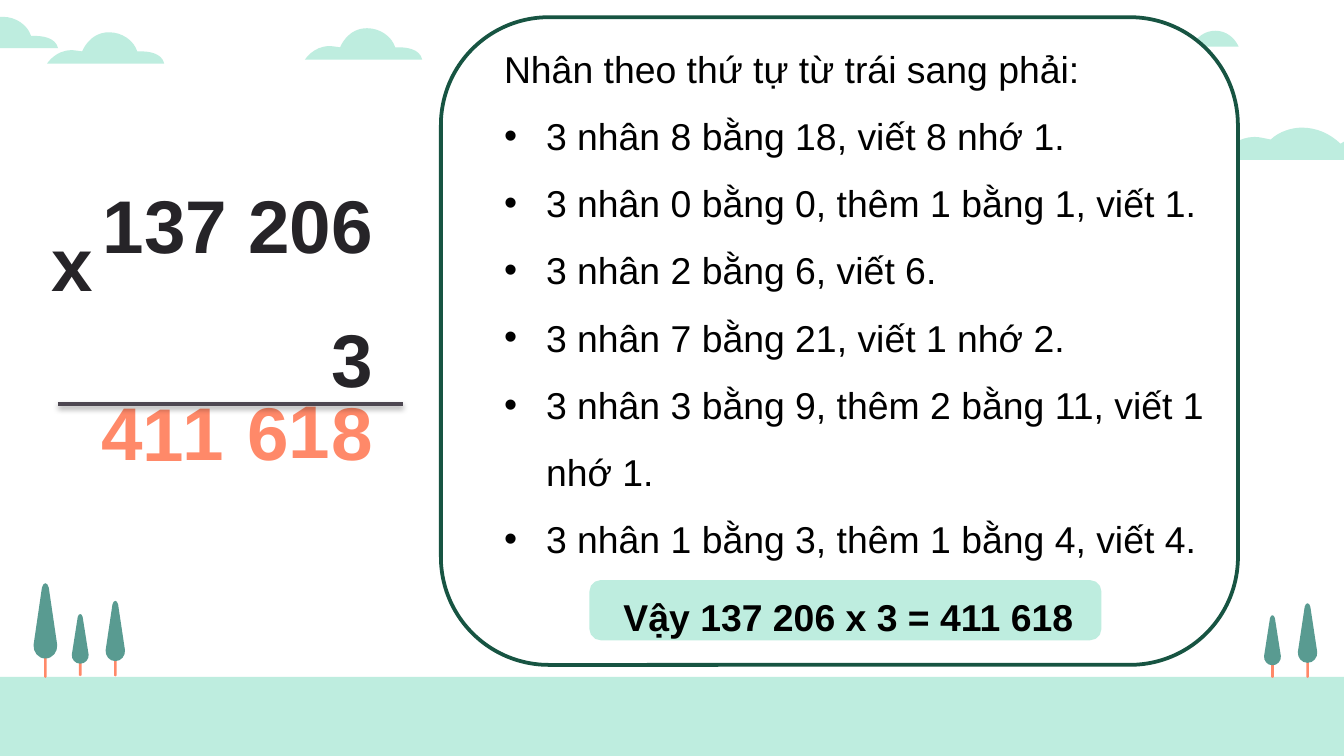
from lxml import etree
from pptx import Presentation, util as u
from pptx.dml.color import RGBColor
from pptx.enum import shapes as kinds, text as t
from pptx.oxml import parse_xml
from pptx.oxml.ns import nsdecls, qn

Pt = u.Pt
COLORS = {"mint": "BEEDDF", "leaf": "599B91", "coral": "FF8969", "forest": "175442",
          "ink": "262428", "rule": "4D4751", "black": "000000", "white": "FFFFFF"}
RGB = {name: RGBColor.from_string(value) for name, value in COLORS.items()}

CLOUD = [(.53, 0), (.36, 0, .3, .61, .3, .61), (.26, .59, .23, .57, .21, .57),
         (.07, .57, 0, 1, 0, 1), (1, 1), (.98, .65, .86, .61, .8, .61),
         (.78, .61, .77, .61, .77, .61), (.74, .26, .64, 0, .53, 0)]
WIDE_CLOUD = [(.5, 0), (.44, 0, .36, .12, .31, .37), (.27, .33, .24, .29, .21, .29),
              (.12, .29, .03, .58, 0, 1), (1, 1), (.98, .62, .9, .37, .82, .37),
              (.79, .37, .76, .42, .74, .5), (.67, .17, .59, 0, .5, 0)]
DOME = [(.5, 0), (.27, 0, .09, .42, 0, 1), (1, 1), (.91, .42, .73, 0, .5, 0)]
CROWN = [(.5, 0), (.45, 0, .38, .02, .36, .06), (.02, .82), (0, .91, .2, 1, .5, 1),
         (.8, 1, 1, .91, .98, .82), (.64, .06), (.62, .02, .55, 0, .5, 0)]
TRUNK = [(.5, 0), (.2, 0, 0, .02, 0, .05), (0, .95), (0, .98, .2, 1, .5, 1),
         (.8, 1, 1, .98, 1, .95), (1, .05), (1, .02, .8, 0, .5, 0)]

prs = Presentation()
prs.slide_width, prs.slide_height = Pt(720), Pt(405)
slide = prs.slides.add_slide(prs.slide_layouts[1])
slide.shapes.title.element.getparent().remove(slide.shapes.title.element)


def draw(steps, left, top, width, height, color):
    anchors = [(Pt(left + step[-2] * width), Pt(top + step[-1] * height)) for step in steps]
    builder = slide.shapes.build_freeform(*anchors[0])
    builder.add_line_segments(anchors[1:], close=True)
    outline = builder.convert_to_shape()
    outline.shadow.inherit = False
    outline.fill.solid()
    outline.fill.fore_color.rgb = RGB[color]
    outline.line.fill.background()
    segments = list(outline.element.iter(qn("a:lnTo")))
    for segment, step in zip(segments, steps[1:]):
        if len(step) == 6:
            curve = etree.Element(qn("a:cubicBezTo"))
            for x, y in zip(step[::2], step[1::2]):
                etree.SubElement(curve, qn("a:pt"),
                                 x=str(Pt(left + x * width) - outline.left),
                                 y=str(Pt(top + y * height) - outline.top))
            segment.getparent().replace(segment, curve)


def write(frame, lines, size, color, bold=False, align=t.PP_ALIGN.LEFT, spacing=1.0):
    frame.word_wrap = True
    for i, line in enumerate(lines):
        para = frame.paragraphs[0] if i == 0 else frame.add_paragraph()
        para.alignment, para.line_spacing = align, spacing
        para.space_before = Pt(0)
        run = para.add_run()
        run.text = line
        run.font.name, run.font.size, run.font.bold = "Arial", Pt(size), bold
        run.font.color.rgb = RGB[color]


draw(WIDE_CLOUD, 653.8, 68.4, 87, 17.3, "mint")
draw(DOME, 638.6, 16.5, 25, 8.5, "mint")
for left, top in [(-31.7, 9), (25.2, 17.3), (163.4, 15.1)]:
    draw(CLOUD, left, top, 62.8, 16.8, "mint")

panels = [
    (kinds.MSO_SHAPE.RECTANGLE, -2.2, 362.6, 724.3, 42.5, "mint", None),
    (kinds.MSO_SHAPE.ROUNDED_RECTANGLE, 236.2, 9.2, 427, 347, "white", "forest"),
    (kinds.MSO_SHAPE.ROUNDED_RECTANGLE, 316.8, 311.8, 272.2, 30.2, "mint", "mint"),
]
for kind, left, top, width, height, fill, edge in panels:
    panel = slide.shapes.add_shape(kind, Pt(left), Pt(top), Pt(width), Pt(height))
    panel.shadow.inherit = False
    panel.fill.solid()
    panel.fill.fore_color.rgb = RGB[fill]
    if edge:
        panel.line.color.rgb = RGB[edge]
        panel.line.width = Pt(2)
    else:
        panel.line.fill.background()

trees = [
    (24.3, 312.5, 13.2, 40.3, 363.2),
    (43, 329, 9.4, 26.6, 362.2),
    (61.8, 321.9, 10.8, 32.3, 362.4),
    (681.7, 329.6, 9.4, 26.8, 363.2),
    (700.5, 323.2, 10.8, 31.9, 363.2),
]
for middle, top, width, height, foot in trees:
    trunk_top = top + height - 1.6
    draw(TRUNK, middle - .7, trunk_top, 1.4, foot - trunk_top, "coral")
    draw(CROWN, middle - width / 2, top, width, height, "leaf")

factors = slide.shapes.add_shape(kinds.MSO_SHAPE.RECTANGLE, Pt(13.7), Pt(141.1), Pt(193), Pt(77))
factors.shadow.inherit = False
factors.fill.background()
factors.line.color.rgb = RGB["white"]
factors.line.width = Pt(.75)
sign = slide.shapes.add_textbox(Pt(13.7), Pt(117.4), Pt(43.2), Pt(45.4))
middle = t.MSO_ANCHOR.MIDDLE
jobs = [(factors, ["137 206", "3"], "ink", 1.5, t.MSO_ANCHOR.BOTTOM, 2.5),
        (sign, ["x "], "ink", 1.0, middle, 7.2)]
for digit, left, top in [("8 ", 170.6, 229), ("1 ", 147.6, 228.2), ("6 ", 125.3, 229),
                         ("1 ", 90.7, 229), ("1 ", 69.1, 229.7), ("4 ", 47.5, 229)]:
    product = slide.shapes.add_textbox(Pt(left), Pt(top), Pt(31.7), Pt(51.1))
    jobs.append((product, [digit], "coral", 1.0, middle, 7.2))
for holder, lines, color, spacing, anchor, inset in jobs:
    frame = holder.text_frame
    frame.margin_top = frame.margin_bottom = Pt(inset)
    frame.vertical_anchor = anchor
    write(frame, lines, 40, color, True, t.PP_ALIGN.RIGHT, spacing)

rule = slide.shapes.add_connector(kinds.MSO_CONNECTOR.STRAIGHT,
                                  Pt(31), Pt(216.5), Pt(216), Pt(216.5))
rule.line.color.rgb = RGB["rule"]
rule.line.width = Pt(2)
rule.element.spPr.append(parse_xml(
    f'<a:effectLst {nsdecls("a")}><a:outerShdw blurRad="{Pt(3.1)}" dist="{Pt(1.6)}" '
    f'dir="5400000" rotWithShape="0"><a:srgbClr val="{COLORS["black"]}">'
    '<a:alpha val="38000"/></a:srgbClr></a:outerShdw></a:effectLst>'))

steps = slide.placeholders[1]
steps.left, steps.top, steps.width, steps.height = Pt(262.8), Pt(9), Pt(409.7), Pt(293.8)
steps.element.getparent().append(steps.element)
steps.text_frame.auto_size = t.MSO_AUTO_SIZE.SHAPE_TO_FIT_TEXT
write(steps.text_frame, [
    "Nhân theo thứ tự từ trái sang phải:",
    "3 nhân 8 bằng 18, viết 8 nhớ 1.",
    "3 nhân 0 bằng 0, thêm 1 bằng 1, viết 1.",
    "3 nhân 2 bằng 6, viết 6.",
    "3 nhân 7 bằng 21, viết 1 nhớ 2.",
    "3 nhân 3 bằng 9, thêm 2 bằng 11, viết 1 nhớ 1.",
    "3 nhân 1 bằng 3, thêm 1 bằng 4, viết 4.",
], 20, "black", spacing=1.5)
for i, para in enumerate(steps.text_frame.paragraphs):
    props = para._p.get_or_add_pPr()
    indent = Pt(22.5) if i else 0
    props.set("marL", str(indent))
    props.set("indent", str(-indent))
    if i:
        bullet_color = etree.SubElement(props, qn("a:buClr"))
        etree.SubElement(bullet_color, qn("a:srgbClr"), val=COLORS["black"])
        etree.SubElement(props, qn("a:buFont"), typeface="Arial")
        etree.SubElement(props, qn("a:buChar"), char="•")
    else:
        etree.SubElement(props, qn("a:buNone"))

answer = slide.shapes.add_textbox(Pt(326.9), Pt(302.6), Pt(267.1), Pt(38.9))
answer.text_frame.auto_size = t.MSO_AUTO_SIZE.SHAPE_TO_FIT_TEXT
write(answer.text_frame, ["Vậy 137 206 x 3 = 411 618"], 20, "black", True, spacing=1.5)

prs.save("out.pptx")
